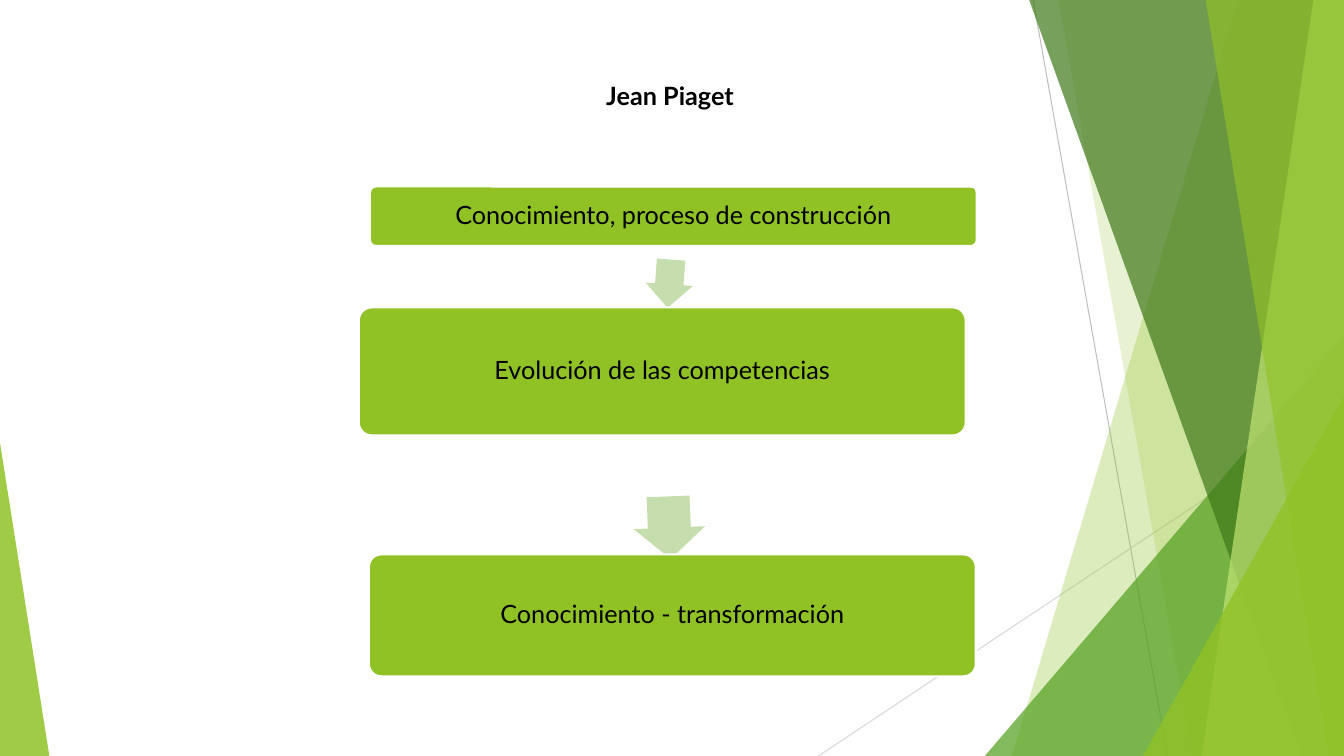
from lxml.etree import SubElement
from pptx import Presentation
from pptx.dml.color import RGBColor
from pptx.enum.shapes import MSO_CONNECTOR, MSO_SHAPE
from pptx.enum.text import MSO_ANCHOR, PP_ALIGN
from pptx.oxml.ns import qn
from pptx.util import Inches, Pt

COLUMNS, ROWS = 40, 22.5


def color(value):
    return RGBColor.from_string(value)


class Page:
    font = "Lato"
    size = Pt(18)
    ink = "000000"
    green = "90C226"
    pale = "C6DDAD"
    white = "FFFFFF"

    def __init__(self, deck):
        self.slide = deck.slides.add_slide(deck.slide_layouts[6])
        self.shapes = self.slide.shapes
        self.column = deck.slide_width / COLUMNS
        self.row = deck.slide_height / ROWS
        background = self.slide.background.fill
        background.solid()
        background.fore_color.rgb = color(self.white)

    def grid(self, *lengths):
        units = (self.column, self.row) * 2
        return [round(length * unit) for length, unit in zip(lengths, units)]

    def paint(self, shape, fill, opacity=100):
        shape.shadow.inherit = False
        shape.fill.solid()
        shape.fill.fore_color.rgb = color(fill)
        shape.line.fill.background()
        if opacity < 100:
            tone = shape._element.spPr.find(qn("a:solidFill"))[0]
            SubElement(tone, qn("a:alpha")).set("val", str(opacity * 1000))

    def line(self, start, end, tint):
        connector = self.shapes.add_connector(
            MSO_CONNECTOR.STRAIGHT, *self.grid(*start, *end))
        connector.line.color.rgb = color(tint)
        connector.line.width = Pt(0.75)
        SubElement(connector._element.spPr, qn("a:effectLst"))

    def facet(self, top, bottom, fill, opacity):
        corners = [(top, 0), (COLUMNS, 0), (COLUMNS, ROWS), (bottom, ROWS)]
        points = [self.grid(*corner) for corner in corners]
        builder = self.shapes.build_freeform(*points[0])
        builder.add_line_segments(points[1:], close=True)
        self.paint(builder.convert_to_shape(), fill, opacity)

    def triangle(self, left, top, width, peak, fill, opacity):
        shape = self.shapes.add_shape(
            MSO_SHAPE.ISOSCELES_TRIANGLE,
            *self.grid(left, top, width, ROWS - top))
        shape.adjustments[0] = peak
        self.paint(shape, fill, opacity)

    def label(self, frame, text, bold=False):
        frame.word_wrap = True
        frame.text = text
        para = frame.paragraphs[0]
        para.alignment = PP_ALIGN.CENTER
        span = para.runs[0]
        span.font.name = self.font
        span.font.size = self.size
        span.font.bold = bold
        span.font.color.rgb = color(self.ink)
        return para

    def title(self, text, *place):
        box = self.shapes.add_textbox(*self.grid(*place))
        para = self.label(box.text_frame, text, bold=True)
        para.space_before = Pt(10)

    def step(self, text, *place):
        box = self.shapes.add_shape(
            MSO_SHAPE.ROUNDED_RECTANGLE, *self.grid(*place))
        box.adjustments[0] = 0.1
        self.paint(box, self.green)
        box.line.color.rgb = color(self.white)
        box.line.width = Pt(1.5)
        frame = box.text_frame
        frame.vertical_anchor = MSO_ANCHOR.MIDDLE
        frame.margin_left = frame.margin_right = Inches(0.07)
        frame.margin_top = frame.margin_bottom = Inches(0.07)
        para = self.label(frame, text)
        para.line_spacing = 0.9
        para.space_after = Pt(6.3)

    def arrow(self, rotation, *place):
        shape = self.shapes.add_shape(
            MSO_SHAPE.RIGHT_ARROW, *self.grid(*place))
        shape.adjustments[0] = 0.6
        shape.adjustments[1] = 0.5
        shape.rotation = rotation
        self.paint(shape, self.pale)


def main():
    deck = Presentation()
    deck.slide_width, deck.slide_height = Inches(13.33), Inches(7.5)
    page = Page(deck)

    page.line((30.75, 0), (34.75, ROWS), "BFBFBF")
    page.line((COLUMNS, 12.09), (24.36, ROWS), "D9D9D9")
    page.facet(36.84, 30.12, page.green, 30)
    page.facet(31.5, 35.49, page.green, 20)
    page.triangle(29.31, 10, 10.69, 1, "54A021", 72)
    page.facet(30.63, 38.73, "3F7819", 70)
    page.facet(39.09, 35.76, "C0E474", 70)
    page.facet(35.88, 39.54, page.green, 65)
    page.triangle(34.02, 11.79, 5.98, 1, page.green, 80)
    page.triangle(0, 13.17, 1.47, 0, page.green, 85)

    page.title("Jean Piaget", 5.94, 2.25, 28, 1.56)
    width = 18.06
    page.step("Conocimiento, proceso de construcción", 11.01, 5.55, width, 1.77)
    page.arrow(94.2, 19.2, 7.74, 1.44, 1.41)
    page.step("Evolución de las competencias", 10.68, 9.15, width, 3.81)
    page.arrow(87.7, 18.99, 14.64, 1.86, 2.13)
    page.step("Conocimiento - transformación", 10.98, 16.5, width, 3.63)

    deck.save("out.pptx")


if __name__ == "__main__":
    main()
